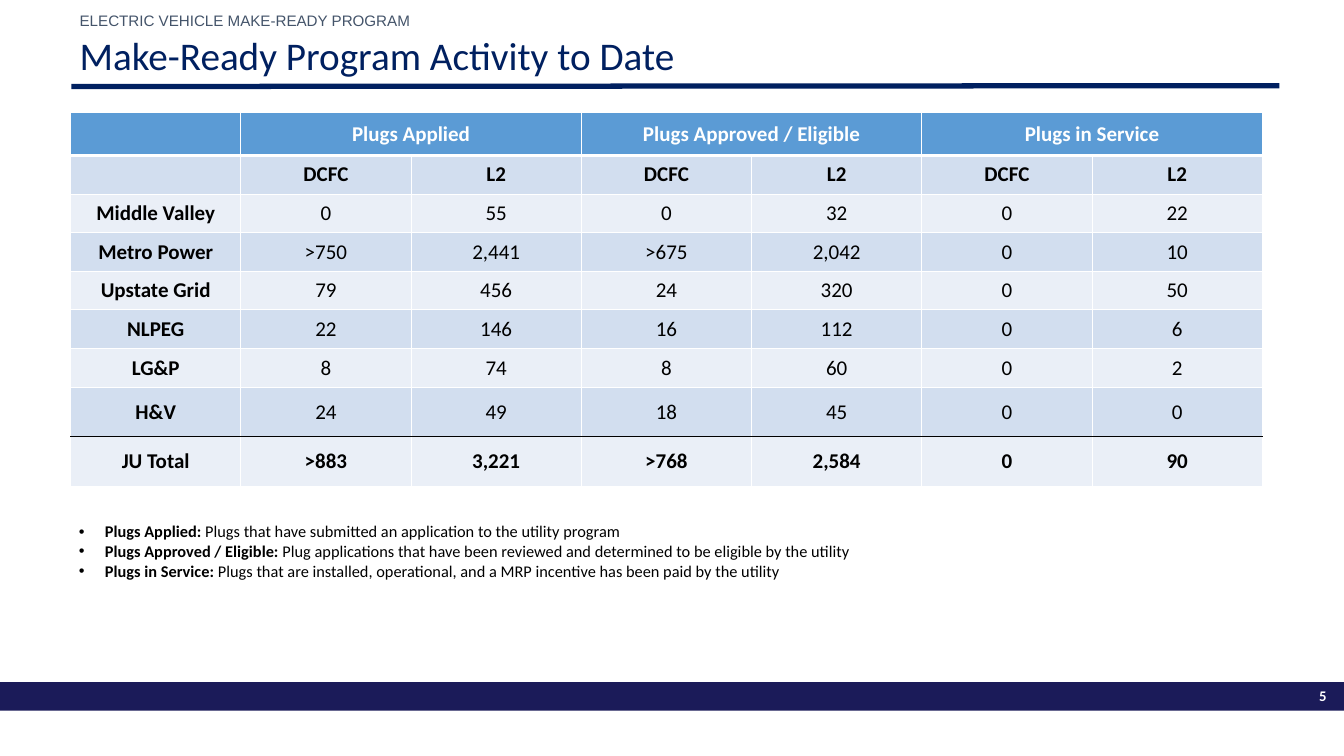
from lxml import etree
from pptx import Presentation
from pptx import util as u
from pptx.dml.color import RGBColor
from pptx.enum import shapes, text
from pptx.oxml.ns import qn

NAVY, WHITE, BLACK = "002060", "FFFFFF", "000000"
HEADER_FILL, BANDS = "5B9BD5", ("EAEFF7", "D2DEEF")
GROUPS = ["Plugs Applied", "Plugs Approved / Eligible", "Plugs in Service"]
ROWS = [
    [""] + ["DCFC", "L2"] * len(GROUPS),
    ["Middle Valley", "0", "55", "0", "32", "0", "22"],
    ["Metro Power", ">750", "2,441", ">675", "2,042", "0", "10"],
    ["Upstate Grid", "79", "456", "24", "320", "0", "50"],
    ["NLPEG", "22", "146", "16", "112", "0", "6"],
    ["LG&P", "8", "74", "8", "60", "0", "2"],
    ["H&V", "24", "49", "18", "45", "0", "0"],
    ["JU Total", ">883", "3,221", ">768", "2,584", "0", "90"],
]
ROW_HEIGHTS = [0.51] + [0.46] * 6 + [0.59] * 2
DEFINITIONS = [
    "Plugs that have submitted an application to the utility program",
    "Plug applications that have been reviewed and determined to be eligible by the utility",
    "Plugs that are installed, operational, and a MRP incentive has been paid by the utility",
]


def rgb(value):
    return RGBColor.from_string(value)


def add_run(p, words, size, color, bold=False, name="Calibri"):
    r = p.add_run()
    r.text = words
    r.font.color.rgb = rgb(color)
    for key, value in {"size": u.Pt(size), "bold": bold, "name": name}.items():
        setattr(r.font, key, value)


def add_box(slide, x, y, w, h, anchor=text.MSO_ANCHOR.TOP):
    tf = slide.shapes.add_textbox(*map(u.Inches, (x, y, w, h))).text_frame
    tf.word_wrap = True
    tf.vertical_anchor = anchor
    return tf


def add_heading(slide, x, y, w):
    p = add_box(slide, x, y, w, 0.26).paragraphs[0]
    p.line_spacing = 0.7
    add_run(p, "ELECTRIC VEHICLE MAKE-READY PROGRAM", 13, "44546A", name="Arial")

    p = add_box(slide, x, y + 0.26, w, 0.57, text.MSO_ANCHOR.MIDDLE).paragraphs[0]
    p.line_spacing = 0.9
    add_run(p, "Make-Ready Program Activity to Date", 33.6, NAVY)

    rule = slide.shapes.add_connector(
        shapes.MSO_CONNECTOR.STRAIGHT,
        *map(u.Inches, (x, y + 0.89, x + w, y + 0.88)))
    rule.line.color.rgb = rgb(NAVY)
    rule.line.width = u.Pt(4.5)
    etree.SubElement(rule._element.spPr, qn("a:effectLst"))


def set_borders(cell, top=(WHITE, 1), bottom=(WHITE, 1)):
    tc_pr = cell._tc.get_or_add_tcPr()
    sides = {"lnL": (WHITE, 1), "lnR": (WHITE, 1), "lnT": top, "lnB": bottom}
    for i, (side, (color, width)) in enumerate(sides.items()):
        ln = etree.Element(qn(f"a:{side}"), w=str(u.Pt(width)))
        fill = etree.SubElement(ln, qn("a:solidFill"))
        etree.SubElement(fill, qn("a:srgbClr"), val=color)
        tc_pr.insert(i, ln)


def style_cell(cell, words, fill, color=BLACK, bold=False, **borders):
    cell.fill.solid()
    cell.fill.fore_color.rgb = rgb(fill)
    cell.vertical_anchor = text.MSO_ANCHOR.MIDDLE
    set_borders(cell, **borders)
    if words:
        p = cell.text_frame.paragraphs[0]
        p.alignment = text.PP_ALIGN.CENTER
        add_run(p, words, 18, color, bold)


def add_plug_table(slide, x, y, w):
    header = [""] + [label for group in GROUPS for label in (group, "")]
    grid = [header] + ROWS
    last = len(grid) - 1
    table = slide.shapes.add_table(
        len(grid), len(header),
        *map(u.Inches, (x, y, w, sum(ROW_HEIGHTS)))).table
    for column in table.columns:
        column.width = u.Inches(w / len(header))
    for row, height in zip(table.rows, ROW_HEIGHTS):
        row.height = u.Inches(height)

    for i, values in enumerate(grid):
        fill, color, borders = BANDS[i % 2], BLACK, {}
        if i == 0:
            fill, color, borders = HEADER_FILL, WHITE, {"bottom": (WHITE, 3)}
        elif i == 1:
            borders = {"top": (WHITE, 3)}
        elif i == last - 1:
            borders = {"bottom": (BLACK, 1)}
        elif i == last:
            borders = {"top": (BLACK, 1)}
        for j, words in enumerate(values):
            bold = i in (0, 1, last) or j == 0
            style_cell(table.cell(i, j), words, fill, color, bold, **borders)

    for j in range(1, len(header), 2):
        table.cell(0, j).merge(table.cell(0, j + 1))


def add_definitions(slide, x, y, w, h):
    tf = add_box(slide, x, y, w, h)
    for i, (term, meaning) in enumerate(zip(GROUPS, DEFINITIONS)):
        p = tf.add_paragraph() if i else tf.paragraphs[0]
        p_pr = p._p.get_or_add_pPr()
        indent = u.Inches(0.31)
        p_pr.set("marL", str(indent))
        p_pr.set("indent", str(-indent))
        etree.SubElement(p_pr, qn("a:buFont"), typeface="Arial")
        etree.SubElement(p_pr, qn("a:buChar"), char="•")
        add_run(p, f"{term}: ", 14, BLACK, bold=True)
        add_run(p, meaning, 14, BLACK)


def add_footer(slide, y, w, h):
    """Draw the full-width band and the page number at its right end."""
    band = slide.shapes.add_shape(
        shapes.MSO_SHAPE.RECTANGLE, *map(u.Inches, (0, y, w, h)))
    band.shadow.inherit = False
    band.fill.solid()
    band.fill.fore_color.rgb = rgb("1B1B59")
    band.line.fill.background()

    p = add_box(slide, w - 0.77, y + 0.01, 0.66, 0.31).paragraphs[0]
    p.alignment = text.PP_ALIGN.RIGHT
    add_run(p, "5", 12.6, WHITE, bold=True)


def main():
    prs = Presentation()
    prs.slide_width, prs.slide_height = u.Inches(16), u.Inches(9)
    slide = prs.slides.add_slide(prs.slide_layouts[6])
    add_footer(slide, 8.12, 16, 0.34)
    add_heading(slide, 0.85, 0.14, 14.38)
    add_plug_table(slide, 0.84, 1.34, 14.19)
    add_definitions(slide, 0.84, 6.16, 12.62, 0.81)
    prs.save("out.pptx")


if __name__ == "__main__":
    main()
